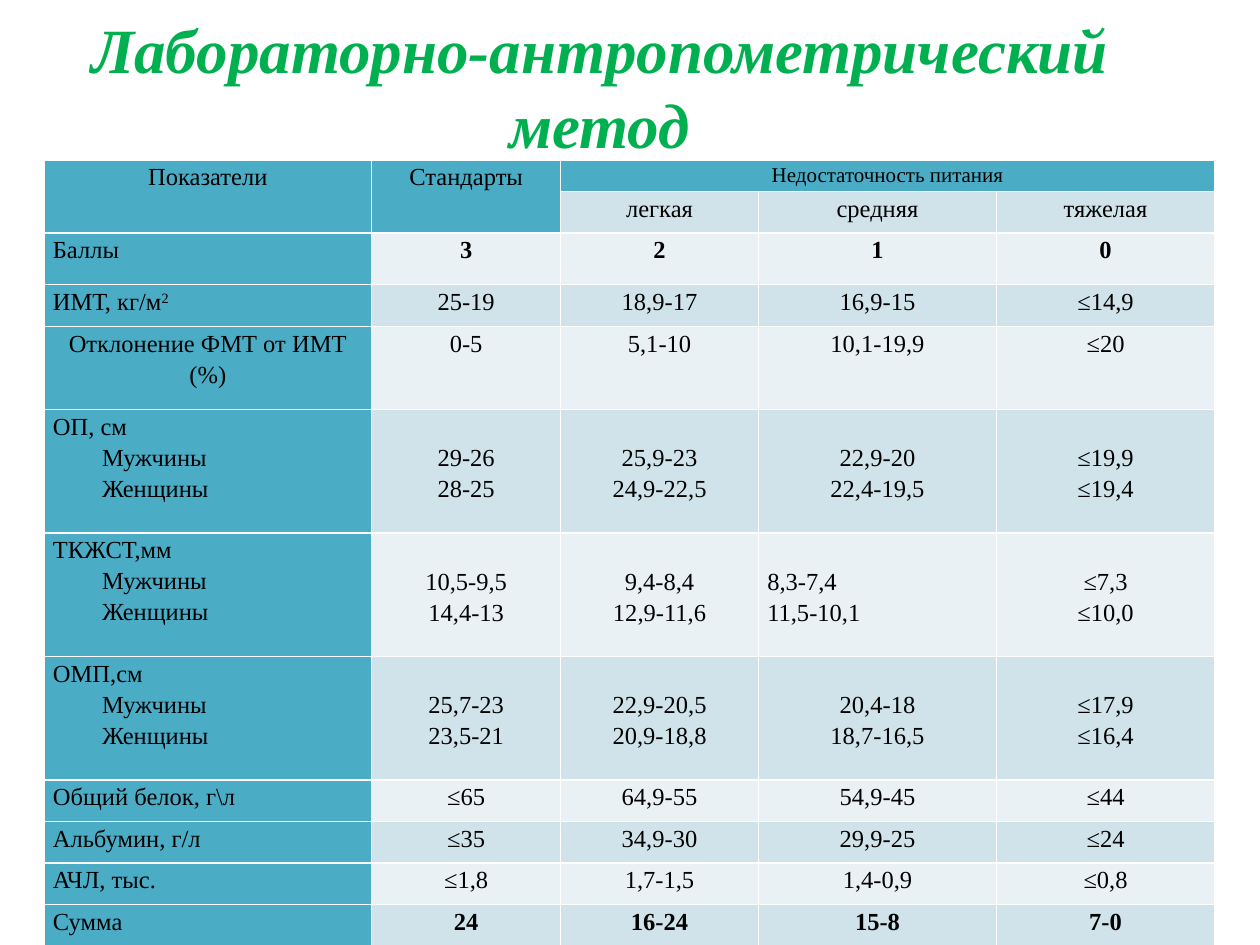
from lxml.etree import SubElement
from pptx import Presentation
from pptx.dml.color import RGBColor
from pptx.enum.text import MSO_ANCHOR, PP_ALIGN
from pptx.oxml.ns import qn
from pptx.util import Inches, Pt

TITLE = "Лабораторно-антропометрический метод"
SEXES = ["Мужчины", "Женщины"]
# Each row: height, label, values; a tuple of values is (men, women).
ROWS = [
    (0.25, "Показатели", ["Стандарты", "Недостаточность питания", "", ""]),
    (0.33, "", ["", "легкая", "средняя", "тяжелая"]),
    (0.41, "Баллы", ["3", "2", "1", "0"]),
    (0.33, "ИМТ, кг/м^2", ["25-19", "18,9-17", "16,9-15", "≤14,9"]),
    (0.66, "Отклонение ФМТ от ИМТ (%)", ["0-5", "5,1-10", "10,1-19,9", "≤20"]),
    (0.98, "ОП, см", [("29-26", "28-25"), ("25,9-23", "24,9-22,5"),
                      ("22,9-20", "22,4-19,5"), ("≤19,9", "≤19,4")]),
    (0.98, "ТКЖСТ,мм", [("10,5-9,5", "14,4-13"), ("9,4-8,4", "12,9-11,6"),
                        ("8,3-7,4", "11,5-10,1"), ("≤7,3", "≤10,0")]),
    (0.98, "ОМП,см", [("25,7-23", "23,5-21"), ("22,9-20,5", "20,9-18,8"),
                      ("20,4-18", "18,7-16,5"), ("≤17,9", "≤16,4")]),
    (0.33, "Общий белок, г\\л", ["≤65", "64,9-55", "54,9-45", "≤44"]),
    (0.33, "Альбумин, г/л", ["≤35", "34,9-30", "29,9-25", "≤24"]),
    (0.33, "АЧЛ, тыс.", ["≤1,8", "1,7-1,5", "1,4-0,9", "≤0,8"]),
    (0.33, "Сумма", ["24", "16-24", "15-8", "7-0"]),
]
COLUMN_WIDTHS = [2.6, 1.5, 1.57, 1.89, 1.73]
MERGES = [((0, 0), (1, 0)), ((0, 1), (1, 1)), ((0, 2), (0, 4))]
BOLD_ROWS = {"Баллы", "Сумма"}
CENTERED_LABELS = {"Показатели", "Отклонение ФМТ от ИМТ (%)"}
LEFT_VALUES = {("8,3-7,4", "11,5-10,1")}

THEME = {
    "font": "Times New Roman",
    "title": "00B050", "text": "000000", "border": "FFFFFF",
    "header": "4BACC6", "bands": ["E9F1F5", "D0E3EA"],
    "title_size": 36, "cell_size": 14, "group_size": 12,
}
LINE_HEIGHT = 0.25
SEX_INDENT = 0.39


def style_font(font, size, color, bold=False, italic=False):
    font.name = THEME["font"]
    font.size = Pt(size)
    font.bold = bold
    font.italic = italic
    font.color.rgb = RGBColor.from_string(color)


def add_borders(cell, width=1):
    properties = cell._tc.get_or_add_tcPr()
    for position, side in enumerate(("a:lnL", "a:lnR", "a:lnT", "a:lnB")):
        line = properties.makeelement(qn(side), {"w": str(Pt(width))})
        fill = SubElement(line, qn("a:solidFill"))
        SubElement(fill, qn("a:srgbClr"), val=THEME["border"])
        properties.insert(position, line)


def write_paragraph(paragraph, text, size, bold, alignment):
    """Write one cell line; what follows ^ is superscript."""
    paragraph.alignment = alignment
    paragraph.line_spacing = 1.15
    for index, part in enumerate(text.split("^")):
        run = paragraph.add_run()
        run.text = part
        style_font(run.font, size, THEME["text"], bold)
        if index:
            run._r.get_or_add_rPr().set("baseline", "30000")


def fill_cell(cell, lines, color, size, bold, alignment):
    cell.fill.solid()
    cell.fill.fore_color.rgb = RGBColor.from_string(color)
    cell.margin_left = cell.margin_right = Inches(0.07)
    cell.margin_top = cell.margin_bottom = 0
    cell.vertical_anchor = MSO_ANCHOR.TOP
    add_borders(cell)
    frame = cell.text_frame
    for index, text in enumerate(lines):
        paragraph = frame.add_paragraph() if index else frame.paragraphs[0]
        write_paragraph(paragraph, text, size, bold, alignment)


def add_title(slide):
    box = slide.shapes.add_textbox(Inches(0.03), Inches(0.21), Inches(9.46), Inches(0.94))
    frame = box.text_frame
    frame.word_wrap = True
    frame.vertical_anchor = MSO_ANCHOR.MIDDLE
    frame.text = TITLE
    paragraph = frame.paragraphs[0]
    paragraph.alignment = PP_ALIGN.CENTER
    style_font(paragraph.runs[0].font, THEME["title_size"], THEME["title"], True, True)


def add_indicator_table(slide):
    table = slide.shapes.add_table(
        len(ROWS), len(COLUMN_WIDTHS), Inches(0.35), Inches(1.27),
        Inches(sum(COLUMN_WIDTHS)), Inches(sum(row[0] for row in ROWS))).table
    table.first_row = table.horz_banding = False
    for column, width in zip(table.columns, COLUMN_WIDTHS):
        column.width = Inches(width)

    for row_index, (height, label, values) in enumerate(ROWS):
        table.rows[row_index].height = Inches(height)
        by_sex = isinstance(values[0], tuple)
        size = THEME["group_size"] if row_index == 0 else THEME["cell_size"]
        band = THEME["header"] if row_index == 0 else THEME["bands"][row_index % 2]

        label_cell = table.cell(row_index, 0)
        label_alignment = PP_ALIGN.CENTER if label in CENTERED_LABELS else PP_ALIGN.LEFT
        fill_cell(label_cell, [label] + (SEXES if by_sex else []), THEME["header"],
                  THEME["cell_size"], False, label_alignment)
        for paragraph in label_cell.text_frame.paragraphs[1:]:
            paragraph._p.get_or_add_pPr().set("marL", str(Inches(SEX_INDENT)))

        for column_index, value in enumerate(values, start=1):
            cell = table.cell(row_index, column_index)
            lines = value if by_sex else [value]
            value_size = THEME["cell_size"] if column_index == 1 else size
            alignment = PP_ALIGN.LEFT if value in LEFT_VALUES else PP_ALIGN.CENTER
            fill_cell(cell, lines, band, value_size, label in BOLD_ROWS, alignment)
            if by_sex:
                cell.margin_top = Inches(LINE_HEIGHT)

    for first, last in MERGES:
        table.cell(*first).merge(table.cell(*last))


def main():
    presentation = Presentation()
    presentation.slide_width = Inches(10)
    presentation.slide_height = Inches(7.5)
    slide = presentation.slides.add_slide(presentation.slide_layouts[6])
    add_title(slide)
    add_indicator_table(slide)
    presentation.save("out.pptx")


if __name__ == "__main__":
    main()
